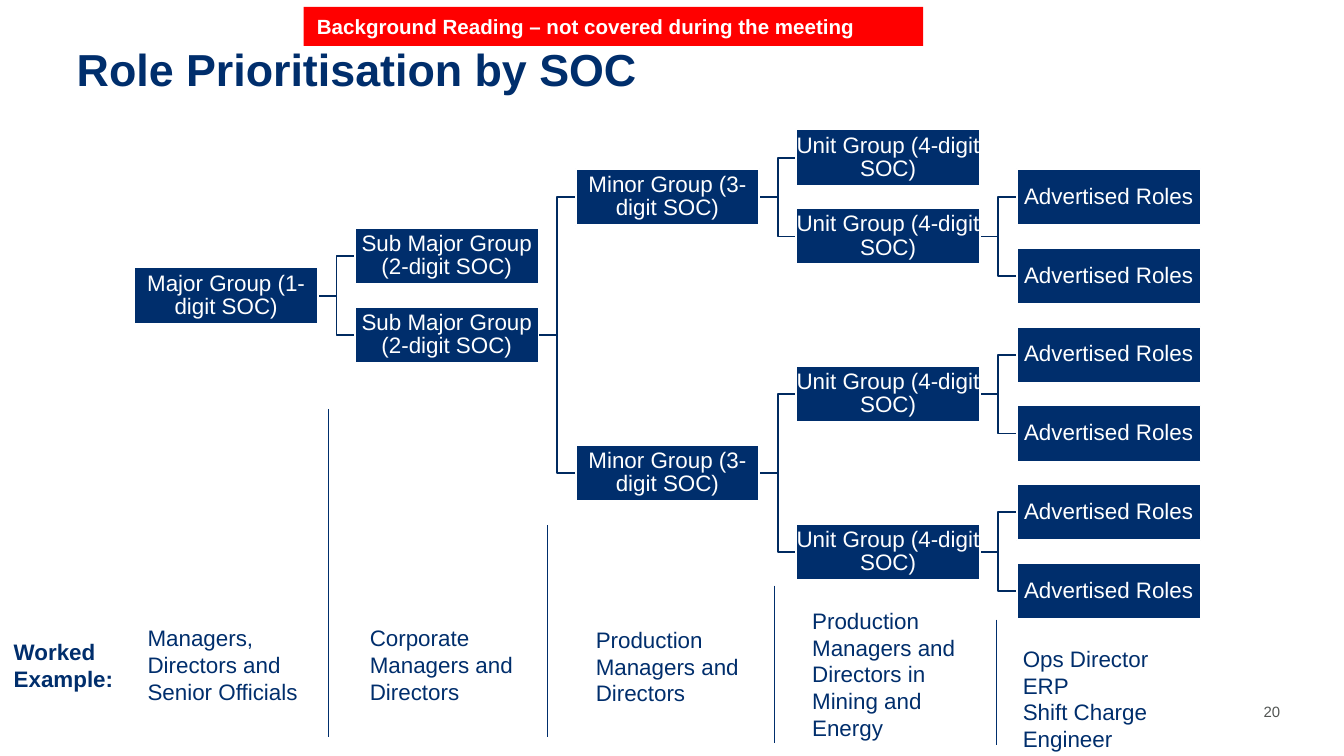
from dataclasses import dataclass

from pptx import Presentation
from pptx.dml.color import RGBColor
from pptx.enum.shapes import MSO_CONNECTOR, MSO_SHAPE
from pptx.enum.text import MSO_ANCHOR, PP_ALIGN
from pptx.oxml.ns import qn
from pptx.util import Cm, Pt

RECTANGLE = MSO_SHAPE.RECTANGLE
ELBOW, STRAIGHT = MSO_CONNECTOR.ELBOW, MSO_CONNECTOR.STRAIGHT
LEFT, CENTER = PP_ALIGN.LEFT, PP_ALIGN.CENTER
TOP, MIDDLE = MSO_ANCHOR.TOP, MSO_ANCHOR.MIDDLE
RIGHT_SITE, LEFT_SITE = 3, 1


@dataclass(frozen=True)
class Theme:
    font: str = "Arial"
    navy: RGBColor = RGBColor(0x00, 0x2E, 0x6C)
    branch: RGBColor = RGBColor(0x00, 0x2A, 0x60)
    grey: RGBColor = RGBColor(0x52, 0x55, 0x53)
    red: RGBColor = RGBColor(0xFF, 0x00, 0x00)
    white: RGBColor = RGBColor(0xFF, 0xFF, 0xFF)
    title: Pt = Pt(24)
    body: Pt = Pt(12)
    banner: Pt = Pt(11)
    number: Pt = Pt(8)
    box_leading: Pt = Pt(12.5)


THEME = Theme()

# Hierarchy grid, in centimetres
TREE_LEFT, TREE_TOP = 2.54, 2.45
COLUMN_STEP, ROW_STEP = 4.17, 1.49
BOX_WIDTH, BOX_HEIGHT = 3.47, 1.06

# One entry per level: label, row of each box, index of each box's parent
LEVELS = [
    ("Major Group (1-digit SOC)", [1.75], []),
    ("Sub Major Group (2-digit SOC)", [1.25, 2.25], [0, 0]),
    ("Minor Group (3-digit SOC)", [0.5, 4], [1, 1]),
    ("Unit Group (4-digit SOC)", [0, 1, 3, 5], [0, 0, 1, 1]),
    ("Advertised Roles", [row + 0.5 for row in range(6)], [1, 1, 2, 2, 3, 3]),
]

# Worked example: left, top, width, height, paragraphs
EXAMPLES = [
    (2.76, 11.73, 2.95, 1.6, ["Managers, Directors and Senior Officials"]),
    (6.96, 11.73, 2.8, 1.6, ["Corporate Managers and Directors"]),
    (11.23, 11.76, 2.8, 1.6, ["Production Managers and Directors"]),
    (15.32, 11.4, 2.8, 2.62,
     ["Production Managers and Directors in Mining and Energy"]),
    (19.3, 12.12, 2.5, 2.11, ["Ops Director ERP", "Shift Charge Engineer"]),
]

# Column dividers: x, top, bottom
DIVIDERS = [
    (6.21, 7.73, 13.94),
    (10.34, 9.93, 13.94),
    (14.64, 11.07, 14.04),
    (18.83, 11.71, 14.08),
]


def write(shape, paragraphs, size, color, bold=False, align=LEFT, anchor=TOP,
          inset_left=0.0, inset_top=0.0, leading=None):
    frame = shape.text_frame
    frame.word_wrap = True
    frame.vertical_anchor = anchor
    frame.margin_left, frame.margin_top = Cm(inset_left), Cm(inset_top)
    frame.margin_right = frame.margin_bottom = 0
    for index, text in enumerate(paragraphs):
        paragraph = frame.paragraphs[0] if index == 0 else frame.add_paragraph()
        paragraph.text = text
        paragraph.alignment = align
        if leading:
            paragraph.line_spacing = leading
        font = paragraph.font
        font.name, font.size, font.bold = THEME.font, size, bold
        font.color.rgb = color


def add_text(slide, left, top, width, height, paragraphs, size=THEME.body,
             color=THEME.navy, bold=False):
    box = slide.shapes.add_textbox(Cm(left), Cm(top), Cm(width), Cm(height))
    write(box, paragraphs, size, color, bold, inset_left=0.03, inset_top=0.07)


def add_box(slide, left, top, width, height, fill):
    box = slide.shapes.add_shape(
        RECTANGLE, Cm(left), Cm(top), Cm(width), Cm(height))
    box.shadow.inherit = False
    box.fill.solid()
    box.fill.fore_color.rgb = fill
    box.line.fill.background()
    return box


def add_line(slide, kind, start, end, color, weight):
    line = slide.shapes.add_connector(
        kind, Cm(start[0]), Cm(start[1]), Cm(end[0]), Cm(end[1]))
    line.line.color.rgb = color
    line.line.width = Pt(weight)
    properties = line._element.spPr
    properties.append(properties.makeelement(qn("a:effectLst"), {}))
    return line


def add_group(slide, label, column, row):
    group = add_box(slide, TREE_LEFT + column * COLUMN_STEP,
                    TREE_TOP + row * ROW_STEP, BOX_WIDTH, BOX_HEIGHT, THEME.navy)
    group.line.color.rgb = THEME.white
    group.line.width = Pt(1)
    write(group, [label], THEME.body, THEME.white, align=CENTER, anchor=MIDDLE,
          leading=THEME.box_leading)
    return group


def add_branch(slide, parent, child):
    branch = add_line(slide, ELBOW, (0, 0), (1, 1), THEME.branch, 1)
    branch.begin_connect(parent, RIGHT_SITE)
    branch.end_connect(child, LEFT_SITE)
    # Behind the boxes, so that their white borders trim the line ends
    tree = branch._element.getparent()
    tree.insert(2, branch._element)


def add_hierarchy(slide):
    parents = []
    for column, (label, rows, parent_indices) in enumerate(LEVELS):
        groups = [add_group(slide, label, column, row) for row in rows]
        for parent_index, group in zip(parent_indices, groups):
            add_branch(slide, parents[parent_index], group)
        parents = groups


def main():
    deck = Presentation()
    deck.slide_width, deck.slide_height = Cm(25.4), Cm(14.29)
    slide = deck.slides.add_slide(deck.slide_layouts[6])

    # Heading and page number
    add_text(slide, 1.42, 0.71, 12, 1.09, ["Role Prioritisation by SOC"],
             THEME.title, bold=True)
    add_text(slide, 23.85, 13.21, 0.5, 0.41, ["20"], THEME.number, THEME.grey)

    # SOC hierarchy
    add_hierarchy(slide)

    # Worked example under the columns
    add_text(slide, 0.23, 11.99, 2.1, 1.09, ["Worked Example:"], bold=True)
    for example in EXAMPLES:
        add_text(slide, *example)
    for x, top, bottom in DIVIDERS:
        add_line(slide, STRAIGHT, (x, top), (x, bottom), THEME.navy, 0.5)

    # Banner
    banner = add_box(slide, 5.74, 0.13, 11.71, 0.74, THEME.red)
    write(banner, ["Background Reading – not covered during the meeting"],
          THEME.banner, THEME.white, bold=True, anchor=MIDDLE, inset_left=0.25)

    deck.save("out.pptx")


if __name__ == "__main__":
    main()
